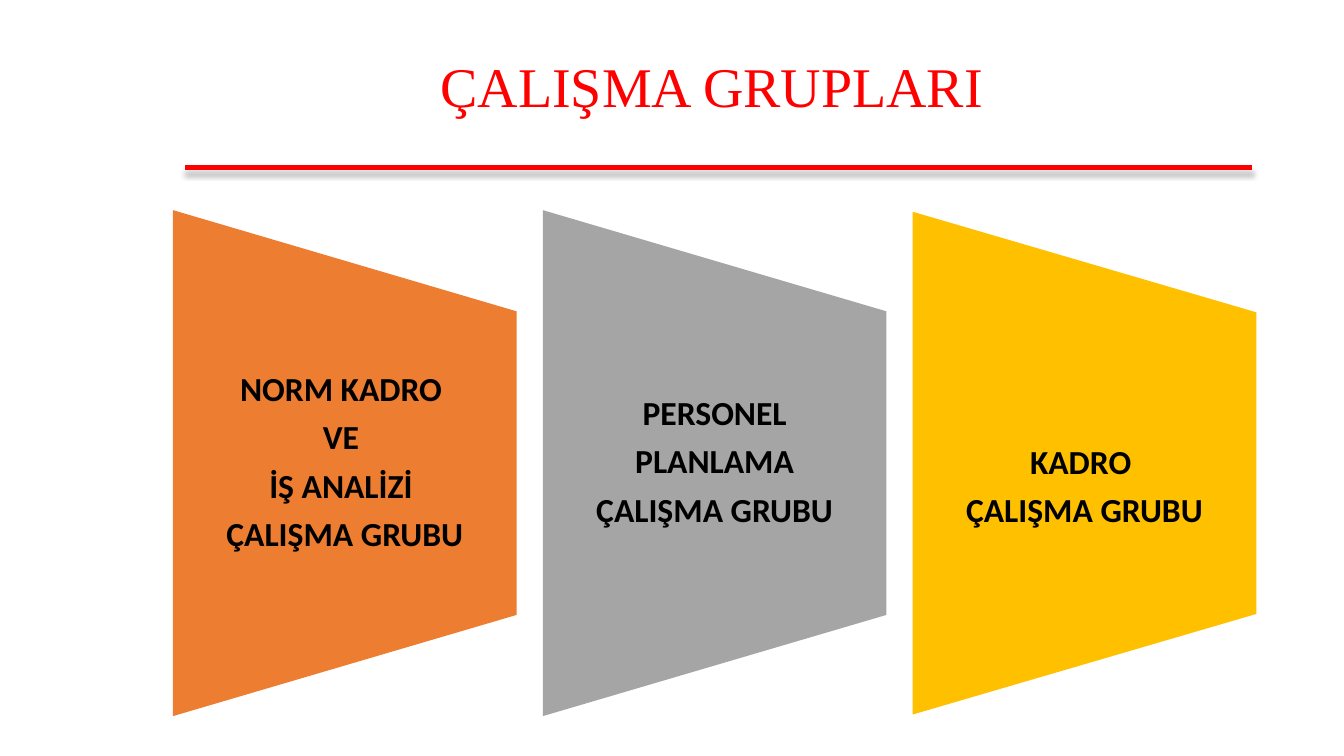
from dataclasses import dataclass

from lxml import etree
from pptx import Presentation
from pptx.dml.color import RGBColor
from pptx.enum.shapes import MSO_CONNECTOR, MSO_SHAPE
from pptx.enum.text import MSO_ANCHOR, MSO_AUTO_SIZE, PP_ALIGN
from pptx.oxml import parse_xml
from pptx.oxml.ns import nsdecls
from pptx.util import Cm, Pt

STRAIGHT = MSO_CONNECTOR.STRAIGHT
TRAPEZOID = MSO_SHAPE.FLOWCHART_MANUAL_OPERATION
MIDDLE = MSO_ANCHOR.MIDDLE
CENTER = PP_ALIGN.CENTER
NO_AUTOFIT = MSO_AUTO_SIZE.NONE

# Layout in centimetres
LEFT, CENTER_Y, STEP = 4.36, 11.67, 9.32
GROUP_W, TEXT_H, INSET = 8.66, 7.65, 0.43


@dataclass
class WorkGroup:
    lines: list[str]
    fill: str
    height: float = 12.75
    text_drop: float = 0


GROUPS = [
    WorkGroup(["NORM KADRO ", "VE ", "İŞ ANALİZİ ", "ÇALIŞMA GRUBU"], "ED7D31"),
    WorkGroup(["PERSONEL", "PLANLAMA", "ÇALIŞMA GRUBU"], "A5A5A5"),
    WorkGroup(["KADRO ", "ÇALIŞMA GRUBU"], "FFC000", 12.67, 0.61),
]


def rgb(value: str) -> RGBColor:
    return RGBColor.from_string(value)


def format_text(tf, font: str, size: float, color: str, bold: bool,
                after: float) -> None:
    tf.word_wrap = True
    tf.auto_size = NO_AUTOFIT
    tf.vertical_anchor = MIDDLE
    for p in tf.paragraphs:
        p.alignment = CENTER
        p.line_spacing = 0.9
        p.space_before = Pt(0)
        p.space_after = Pt(after)
        for r in p.runs:
            r.font.name = font
            r.font.size = Pt(size)
            r.font.bold = bold
            r.font.color.rgb = rgb(color)


def add_title(slide, text: str) -> None:
    title = slide.shapes.title
    title.left, title.top = Cm(5.92), Cm(1.02)
    title.width, title.height = Cm(24.03), Cm(2.46)
    title.text_frame.text = text
    format_text(title.text_frame, "Times New Roman", 40, "FF0000", False, 0)


def add_rule(slide) -> None:
    rule = slide.shapes.add_connector(STRAIGHT, Cm(31.55), Cm(4.22), Cm(4.67), Cm(4.22))
    rule.line.color.rgb = rgb("FF0000")
    rule.line.width = Pt(3)
    effects = parse_xml(f"<a:effectLst {nsdecls('a')}/>")
    shadow = etree.SubElement(
        effects, effects.tag.replace("effectLst", "outerShdw"),
        blurRad=str(Pt(4)), dist=str(Pt(4)), dir="5400000", rotWithShape="0")
    shadow.append(parse_xml(
        f"<a:srgbClr {nsdecls('a')} val='000000'><a:alpha val='25000'/></a:srgbClr>"))
    rule.line._get_or_add_ln().addnext(effects)


def add_group(slide, group: WorkGroup, left: float) -> None:
    # The shape is turned a quarter, so its width is the visible height
    x = left + (GROUP_W - group.height) / 2
    sp = slide.shapes.add_shape(TRAPEZOID, Cm(x), Cm(CENTER_Y - GROUP_W / 2),
                                Cm(group.height), Cm(GROUP_W))
    sp.rotation = 270
    sp.shadow.inherit = False
    sp.fill.solid()
    sp.fill.fore_color.rgb = rgb(group.fill)
    sp.line.fill.background()

    # Upright label
    top = CENTER_Y - TEXT_H / 2 + group.text_drop
    box = slide.shapes.add_textbox(Cm(left), Cm(top), Cm(GROUP_W), Cm(TEXT_H))
    tf = box.text_frame
    tf.margin_left = tf.margin_right = Cm(INSET)
    tf.margin_top = tf.margin_bottom = Cm(0)
    tf.text = "\n".join(group.lines)
    format_text(tf, "Calibri", 24, "000000", True, 8.4)


def main() -> None:
    prs = Presentation()
    prs.slide_width, prs.slide_height = Cm(33.87), Cm(19.05)
    slide = prs.slides.add_slide(prs.slide_layouts[5])

    add_rule(slide)
    add_title(slide, "ÇALIŞMA GRUPLARI")
    for i, group in enumerate(GROUPS):
        add_group(slide, group, LEFT + i * STEP)

    prs.save("out.pptx")


if __name__ == "__main__":
    main()
